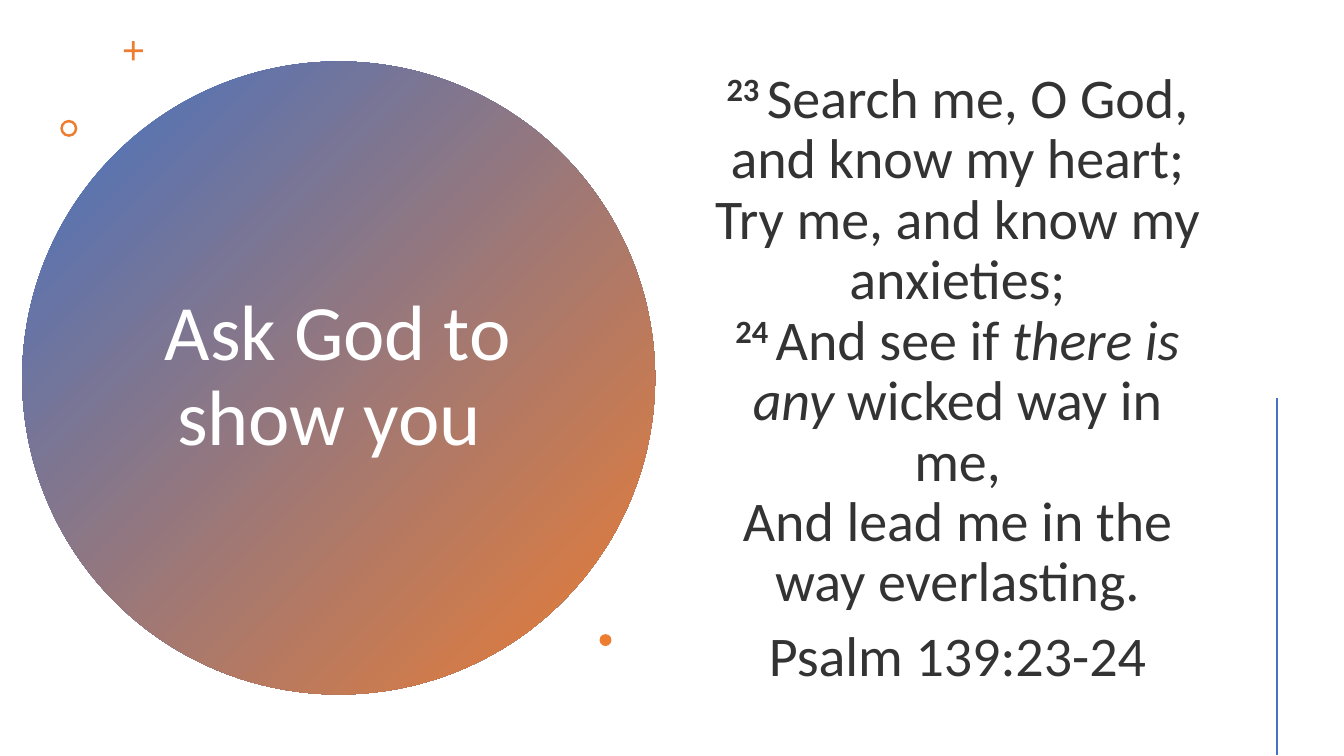
from lxml import etree
from pptx import Presentation
from pptx.dml.color import RGBColor
from pptx.enum.shapes import MSO_CONNECTOR, MSO_SHAPE
from pptx.enum.text import MSO_ANCHOR, MSO_AUTO_SIZE, PP_ALIGN
from pptx.oxml.ns import qn
from pptx.util import Cm, Pt

OVAL, DONUT, CROSS = MSO_SHAPE.OVAL, MSO_SHAPE.DONUT, MSO_SHAPE.CROSS
STRAIGHT = MSO_CONNECTOR.STRAIGHT
MIDDLE, CENTER, NO_FIT = MSO_ANCHOR.MIDDLE, PP_ALIGN.CENTER, MSO_AUTO_SIZE.NONE
TITLE_ONLY = 5
FONT = "Calibri"
BLUE, ORANGE, WHITE, INK = "4472C4", "ED7D31", "FFFFFF", "333333"

# Each verse piece is (text, style); a newline in the text is a line break.
VERSE = [
    ("23 ", "number"),
    ("Search me, O God, and know my heart;\nTry me, and know my anxieties;\n", "plain"),
    ("24 ", "number"),
    ("And see if ", "plain"),
    ("there is any", "italic"),
    (" wicked way in me,\nAnd lead me in the way everlasting.", "plain"),
]
REFERENCE = [("Psalm 139:23-24", "plain")]


def color(code):
    return RGBColor.from_string(code)


def add_plain_shape(page, kind, left, top, size):
    shape = page.shapes.add_shape(kind, Cm(left), Cm(top), Cm(size), Cm(size))
    shape.shadow.inherit = False
    shape.line.fill.background()
    return shape


def format_frame(frame):
    frame.word_wrap = True
    frame.auto_size = NO_FIT
    frame.vertical_anchor = MIDDLE


def add_pieces(para, pieces, size, code):
    para.alignment = CENTER
    para.line_spacing = 0.9
    for text, style in pieces:
        for index, line in enumerate(text.split("\n")):
            if index:
                para.add_line_break()
            if not line:
                continue
            span = para.add_run()
            span.text = line
            span.font.name = FONT
            span.font.size = Pt(size)
            span.font.color.rgb = color(code)
            span.font.bold = style == "number"
            span.font.italic = style == "italic"
            if style == "number":
                span._r.get_or_add_rPr().set("baseline", "30000")


def add_title_circle(page, left, top, size):
    circle = add_plain_shape(page, OVAL, left, top, size)
    circle.fill.gradient()
    circle.fill.gradient_angle = 315
    for stop, position, code in zip(circle.fill.gradient_stops, (0, 1), (BLUE, ORANGE)):
        stop.position = position
        stop.color.rgb = color(code)

    title = page.shapes.title
    title.left, title.top = Cm(left + 2.89), Cm(top + 2.03)
    title.width, title.height = Cm(10.13), Cm(11.86)
    format_frame(title.text_frame)
    add_pieces(title.text_frame.paragraphs[0], [("Ask God to show you ", "plain")], 56, WHITE)
    title.element.addprevious(circle.element)

    ornaments = [
        (CROSS, 2.56, -0.51, 0.48, 0.43),
        (DONUT, 0.96, 1.47, 0.43, 0.15),
        (OVAL, 14.55, 14.43, 0.3, None),
    ]
    for kind, across, down, extent, adjustment in ornaments:
        ornament = add_plain_shape(page, kind, left + across, top + down, extent)
        ornament.fill.solid()
        ornament.fill.fore_color.rgb = color(ORANGE)
        if adjustment is not None:
            ornament.adjustments[0] = adjustment


def add_verse(page, left, top, width, height):
    box = page.shapes.add_textbox(Cm(left), Cm(top), Cm(width), Cm(height))
    format_frame(box.text_frame)
    add_pieces(box.text_frame.paragraphs[0], VERSE, 40, INK)
    reference = box.text_frame.add_paragraph()
    reference.space_before = Pt(10)
    add_pieces(reference, REFERENCE, 40, INK)


def add_side_line(page, left, top, bottom):
    line = page.shapes.add_connector(STRAIGHT, Cm(left), Cm(top), Cm(left), Cm(bottom))
    line.line.color.rgb = color(BLUE)
    line.line.width = Pt(2)
    etree.SubElement(line.element.spPr, qn("a:effectLst"))


def main():
    deck = Presentation()
    deck.slide_width, deck.slide_height = Cm(33.87), Cm(19.05)
    page = deck.slides.add_slide(deck.slide_layouts[TITLE_ONLY])
    add_title_circle(page, 0.56, 1.55, 15.95)
    add_verse(page, 17.5, 1.45, 13.26, 16.21)
    add_side_line(page, 32.18, 10.03, 19.02)
    deck.save("out.pptx")


if __name__ == "__main__":
    main()
